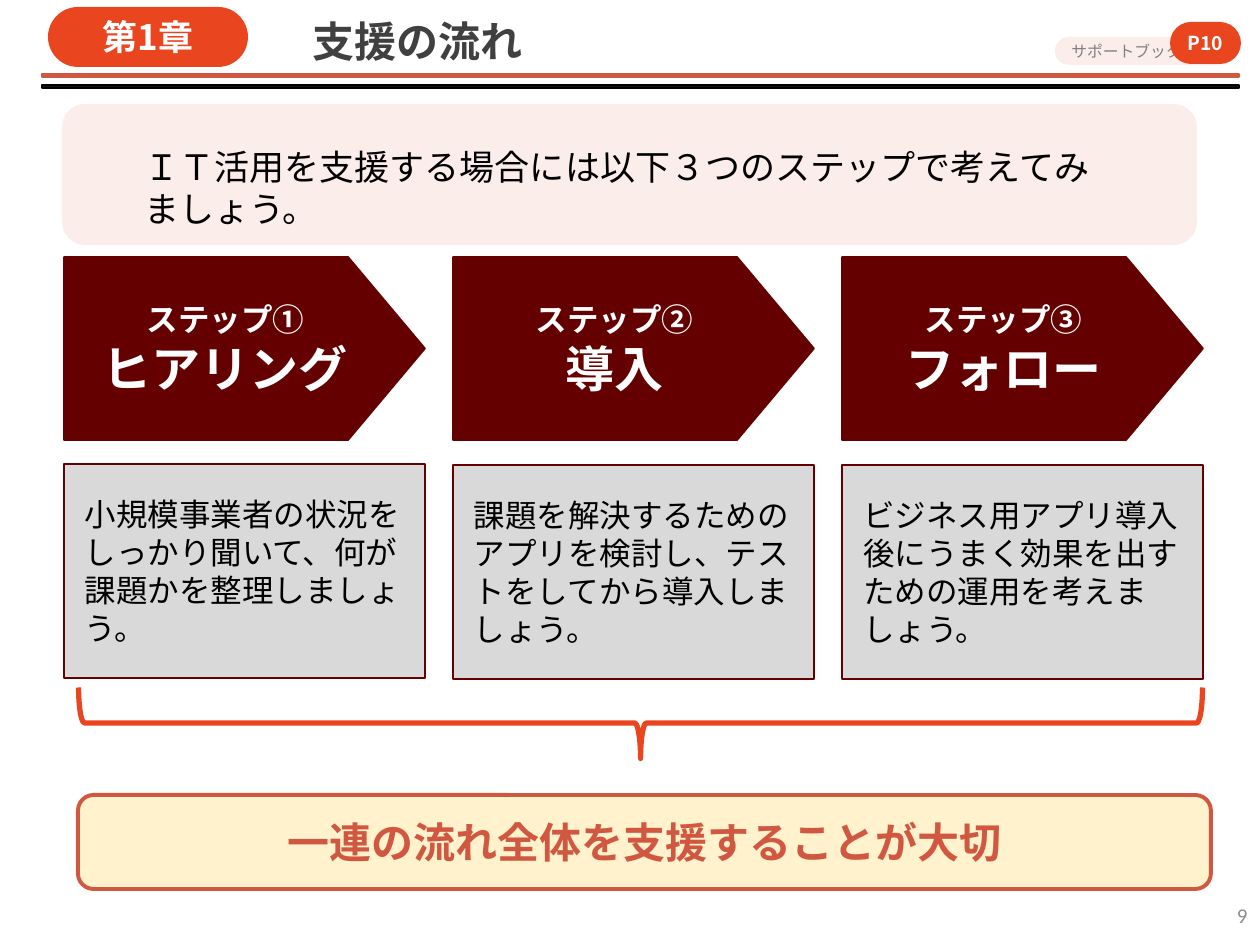
from dataclasses import dataclass
from typing import Optional

from lxml.etree import SubElement
from pptx import Presentation
from pptx.dml.color import RGBColor
from pptx.enum.lang import MSO_LANGUAGE_ID
from pptx.enum.shapes import MSO_SHAPE
from pptx.enum.text import MSO_ANCHOR, PP_ALIGN
from pptx.oxml.ns import qn
from pptx.util import Emu, Pt

PIXELS_PER_INCH = 126
FONT = "Noto Sans CJK JP"

WHITE = RGBColor(0xFF, 0xFF, 0xFF)
BLACK = RGBColor(0x00, 0x00, 0x00)
RULE_BLACK = RGBColor(0x14, 0x14, 0x15)
TITLE_GRAY = RGBColor(0x40, 0x40, 0x40)
LABEL_GRAY = RGBColor(0x80, 0x80, 0x80)
NUMBER_GRAY = RGBColor(0x8C, 0x8C, 0x8C)
CARD_GRAY = RGBColor(0xD9, 0xD9, 0xD9)
ORANGE = RGBColor(0xE9, 0x46, 0x20)
BRICK = RGBColor(0xD1, 0x58, 0x40)
MAROON = RGBColor(0x64, 0x00, 0x00)
PINK = RGBColor(0xFA, 0xED, 0xEA)
CREAM = RGBColor(0xFF, 0xF2, 0xCC)


@dataclass(frozen=True)
class Box:
    left: int
    top: int
    width: int
    height: int

    def emu(self) -> tuple:
        return tuple(map(px, (self.left, self.top, self.width, self.height)))


@dataclass(frozen=True)
class Step:
    label: str
    name: str
    description: str
    card_top: int


STEPS = (
    Step("ステップ①", "ヒアリング",
         "小規模事業者の状況をしっかり聞いて、何が課題かを整理しましょう。", 464),
    Step("ステップ②", "導入",
         "課題を解決するためのアプリを検討し、テストをしてから導入しましょう。", 465),
    Step("ステップ③", "フォロー",
         "ビジネス用アプリ導入後にうまく効果を出すための運用を考えましょう。", 465),
)
STEP_LEFT, STEP_PITCH, STEP_WIDTH = 64, 389, 361


def px(value: int) -> Emu:
    return Emu(round(value * 914400 / PIXELS_PER_INCH))


def write_text(shape, *lines: str, sizes: tuple, color: RGBColor = BLACK,
               bold: bool = False, align: PP_ALIGN = PP_ALIGN.LEFT,
               anchor: MSO_ANCHOR = MSO_ANCHOR.MIDDLE, font: str = FONT,
               insets: Optional[tuple] = None,
               line_spacing: Optional[float] = None) -> None:
    frame = shape.text_frame
    frame.word_wrap = True
    frame.vertical_anchor = anchor
    if insets:
        (frame.margin_left, frame.margin_top,
         frame.margin_right, frame.margin_bottom) = map(px, insets)
    for index, (line, size) in enumerate(zip(lines, sizes)):
        paragraph = frame.add_paragraph() if index else frame.paragraphs[0]
        paragraph.alignment = align
        paragraph.line_spacing = line_spacing
        run = paragraph.add_run()
        run.text = line
        run.font.size = Pt(size)
        run.font.bold = bold
        run.font.color.rgb = color
        run.font.name = font
        run.font.language_id = MSO_LANGUAGE_ID.JAPANESE
        SubElement(run._r.get_or_add_rPr(), qn("a:ea"), typeface=font)


def add_shape(slide, kind: MSO_SHAPE, box: Box, fill: Optional[RGBColor] = None,
              line: Optional[RGBColor] = None, line_width: float = 1,
              adjustment: Optional[float] = None):
    shape = slide.shapes.add_shape(kind, *box.emu())
    shape.shadow.inherit = False
    if fill is None:
        shape.fill.background()
    else:
        shape.fill.solid()
        shape.fill.fore_color.rgb = fill
    if line is None:
        shape.line.fill.background()
    else:
        shape.line.color.rgb = line
        shape.line.width = Pt(line_width)
    if adjustment is not None:
        shape.adjustments[0] = adjustment
    return shape


def add_step(slide, step: Step, left: int) -> None:
    arrow = add_shape(slide, MSO_SHAPE.PENTAGON, Box(left, 257, STEP_WIDTH, 183),
                      MAROON, MAROON, adjustment=0.42)
    write_text(arrow, step.label, step.name, sizes=(18, 28), color=WHITE,
               bold=True, align=PP_ALIGN.CENTER)
    card = add_shape(slide, MSO_SHAPE.RECTANGLE,
                     Box(left, step.card_top, STEP_WIDTH, 214), CARD_GRAY, MAROON)
    write_text(card, step.description, sizes=(18,), insets=(21, 0, 10, 0))


def add_badge(slide, text: str, box: Box, size: int) -> None:
    badge = add_shape(slide, MSO_SHAPE.ROUNDED_RECTANGLE, box, ORANGE, adjustment=0.5)
    write_text(badge, text, sizes=(size,), color=WHITE, bold=True,
               align=PP_ALIGN.CENTER, insets=(0, 0, 0, 0))


def add_header(slide) -> None:
    add_shape(slide, MSO_SHAPE.RECTANGLE, Box(42, 85, 1197, 3), RULE_BLACK, BLACK)
    add_shape(slide, MSO_SHAPE.RECTANGLE, Box(42, 74, 1197, 3), BRICK, BRICK)
    title = slide.shapes.title
    title.left, title.top, title.width, title.height = Box(300, 14, 561, 59).emu()
    write_text(title, "支援の流れ", sizes=(24,), color=TITLE_GRAY, bold=True,
               line_spacing=0.9)
    label = add_shape(slide, MSO_SHAPE.ROUNDED_RECTANGLE, Box(1055, 37, 178, 28),
                      PINK, adjustment=0.5)
    write_text(label, "サポートブック", sizes=(9,), color=LABEL_GRAY)
    add_badge(slide, "P10", Box(1170, 22, 71, 42), 11)
    add_badge(slide, "第1章", Box(48, 7, 200, 60), 20)


def add_introduction(slide) -> None:
    add_shape(slide, MSO_SHAPE.ROUNDED_RECTANGLE, Box(62, 104, 1135, 141), PINK)
    text_box = slide.shapes.add_textbox(*Box(132, 139, 998, 55).emu())
    write_text(text_box, "ＩＴ活用を支援する場合には以下３つのステップで考えてみましょう。",
               sizes=(20,), anchor=MSO_ANCHOR.TOP)


def add_conclusion(slide) -> None:
    brace = add_shape(slide, MSO_SHAPE.RIGHT_BRACE, Box(605, 161, 71, 1124),
                      line=ORANGE, line_width=3)
    brace.rotation = 90
    message = add_shape(slide, MSO_SHAPE.ROUNDED_RECTANGLE, Box(78, 795, 1133, 94),
                        CREAM, BRICK, 2.25)
    write_text(message, "一連の流れ全体を支援することが大切", sizes=(24,),
               color=BRICK, bold=True, align=PP_ALIGN.CENTER)
    number = slide.shapes.add_textbox(*Box(976, 890, 284, 50).emu())
    write_text(number, "9", sizes=(12,), color=NUMBER_GRAY, font="Calibri",
               align=PP_ALIGN.RIGHT)


def main() -> None:
    presentation = Presentation()
    presentation.slide_width, presentation.slide_height = px(1260), px(945)
    slide = presentation.slides.add_slide(presentation.slide_layouts[5])
    add_header(slide)
    add_introduction(slide)
    for index, step in enumerate(STEPS):
        add_step(slide, step, STEP_LEFT + index * STEP_PITCH)
    add_conclusion(slide)
    presentation.save("out.pptx")


if __name__ == "__main__":
    main()
